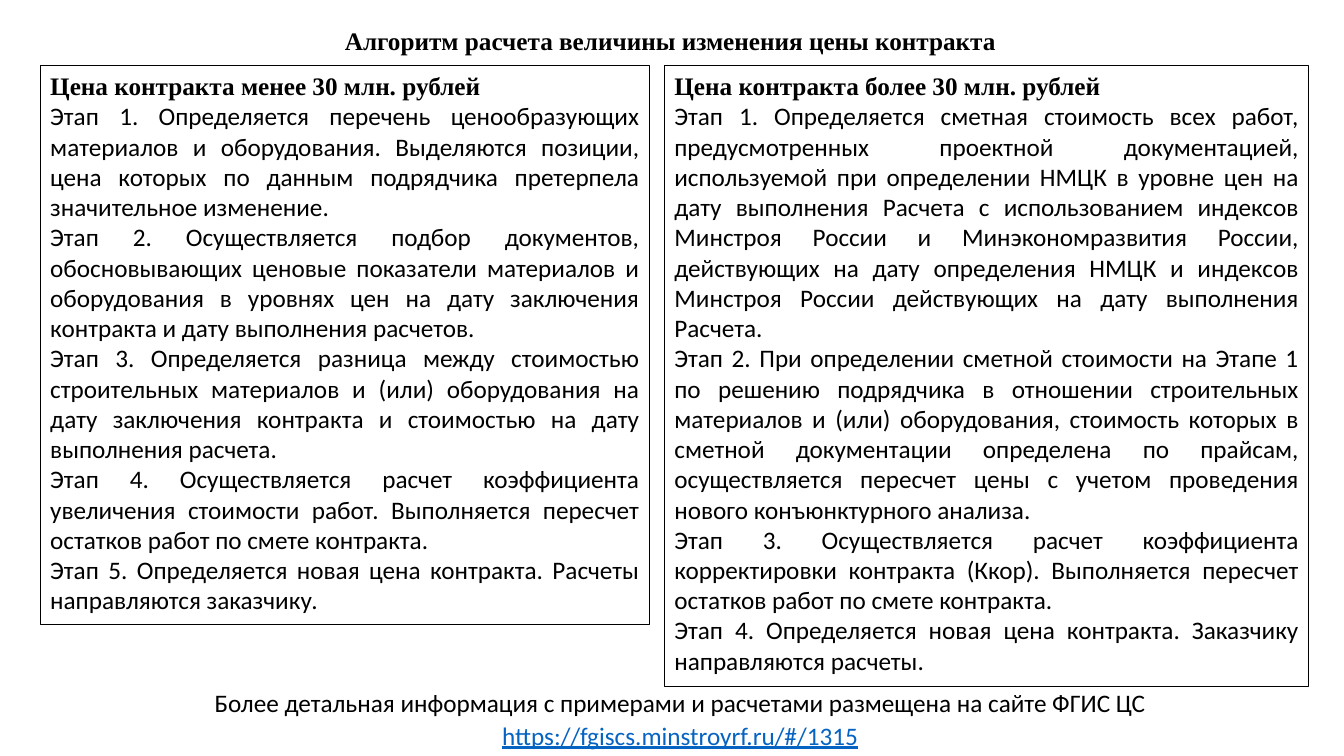
from pptx import Presentation
from pptx.dml.color import RGBColor
from pptx.enum.shapes import MSO_SHAPE
from pptx.enum.text import MSO_ANCHOR, MSO_AUTO_SIZE, PP_ALIGN
from pptx.util import Inches, Pt

COLORS = {"text": "000000", "line": "000000", "link": "0563C1"}
HEADING = {"name": "Times New Roman", "size": Pt(18), "bold": True}
BODY = {"name": "Calibri", "size": Pt(18), "bold": False}
LINK = {**BODY, "underline": True}

TITLE = "Алгоритм расчета величины изменения цены контракта"
NOTE = "Более детальная информация с примерами и расчетами размещена на сайте ФГИС ЦС "
ADDRESS = "https://fgiscs.minstroyrf.ru/#/1315"

PRICE_BOXES = [
    ((0.4, 0.65, 6.04, 5.55), "Цена контракта менее 30 млн. рублей", [
        "Определяется перечень ценообразующих материалов и оборудования. "
        "Выделяются позиции, цена которых по данным подрядчика претерпела "
        "значительное изменение.",
        "Осуществляется подбор документов, обосновывающих ценовые показатели "
        "материалов и оборудования в уровнях цен на дату заключения контракта "
        "и дату выполнения расчетов.",
        "Определяется разница между стоимостью строительных материалов и (или) "
        "оборудования на дату заключения контракта и стоимостью на дату "
        "выполнения расчета.",
        "Осуществляется расчет коэффициента увеличения стоимости работ. "
        "Выполняется пересчет остатков работ по смете контракта.",
        "Определяется новая цена контракта. Расчеты направляются заказчику.",
    ]),
    ((6.59, 0.65, 6.39, 6.16), "Цена контракта более 30 млн. рублей", [
        "Определяется сметная стоимость всех работ, предусмотренных проектной "
        "документацией, используемой при определении НМЦК в уровне цен на дату "
        "выполнения Расчета с использованием индексов Минстроя России и "
        "Минэкономразвития России, действующих на дату определения НМЦК и "
        "индексов Минстроя России действующих на дату выполнения Расчета.",
        "При определении сметной стоимости на Этапе 1 по решению подрядчика в "
        "отношении строительных материалов и (или) оборудования, стоимость "
        "которых в сметной документации определена по прайсам, осуществляется "
        "пересчет цены с учетом проведения нового конъюнктурного анализа.",
        "Осуществляется расчет коэффициента корректировки контракта (Ккор). "
        "Выполняется пересчет остатков работ по смете контракта.",
        "Определяется новая цена контракта. Заказчику направляются расчеты.",
    ]),
]


def add_run(p, text, font, color="text"):
    """Append a formatted run to a paragraph."""
    r = p.add_run()
    r.text = text
    for key, value in font.items():
        setattr(r.font, key, value)
    r.font.color.rgb = RGBColor.from_string(COLORS[color])


def set_paragraph(p, align, spacing=1.0, after=0):
    """Set the alignment and spacing of a paragraph."""
    layout = {"alignment": align, "line_spacing": spacing,
              "space_before": Pt(0), "space_after": Pt(after)}
    for key, value in layout.items():
        setattr(p, key, value)


def set_frame(tf):
    """Make a text frame wrap from the top at a fixed size."""
    frame = {"word_wrap": True, "auto_size": MSO_AUTO_SIZE.NONE,
             "vertical_anchor": MSO_ANCHOR.TOP}
    for key, value in frame.items():
        setattr(tf, key, value)


def add_title(s):
    """Place and fill the slide title."""
    sp = s.shapes.title
    box = {"left": 3.32, "top": 0.18, "width": 6.72, "height": 0.43}
    for key, value in box.items():
        setattr(sp, key, Inches(value))
    set_frame(sp.text_frame)
    p = sp.text_frame.paragraphs[0]
    set_paragraph(p, PP_ALIGN.LEFT, 1.07)
    add_run(p, TITLE, HEADING)


def add_price_box(s, box, heading, stages):
    """Add an outlined box with a heading and numbered stages."""
    sp = s.shapes.add_shape(MSO_SHAPE.RECTANGLE, *map(Inches, box))
    sp.shadow.inherit = False
    sp.fill.background()
    sp.line.color.rgb = RGBColor.from_string(COLORS["line"])
    sp.line.width = Pt(0.75)
    tf = sp.text_frame
    set_frame(tf)
    p = tf.paragraphs[0]
    set_paragraph(p, PP_ALIGN.JUSTIFY)
    add_run(p, heading, HEADING)
    for number, stage in enumerate(stages, 1):
        p = tf.add_paragraph()
        set_paragraph(p, PP_ALIGN.JUSTIFY)
        add_run(p, f"Этап {number}. {stage}", BODY)


def add_source_note(s):
    """Add the closing note with the site address."""
    sp = s.shapes.add_textbox(*map(Inches, (0.6, 6.75, 12.29, 0.75)))
    set_frame(sp.text_frame)
    p = sp.text_frame.paragraphs[0]
    set_paragraph(p, PP_ALIGN.CENTER, 1.07, 18)
    add_run(p, NOTE, BODY)
    add_run(p, ADDRESS, LINK, "link")


def main():
    """Build and save the slide."""
    prs = Presentation()
    prs.slide_width, prs.slide_height = Inches(13.33), Inches(7.5)
    s = prs.slides.add_slide(prs.slide_layouts[5])
    for box, heading, stages in PRICE_BOXES:
        add_price_box(s, box, heading, stages)
    add_title(s)
    add_source_note(s)
    prs.save("out.pptx")


if __name__ == "__main__":
    main()
